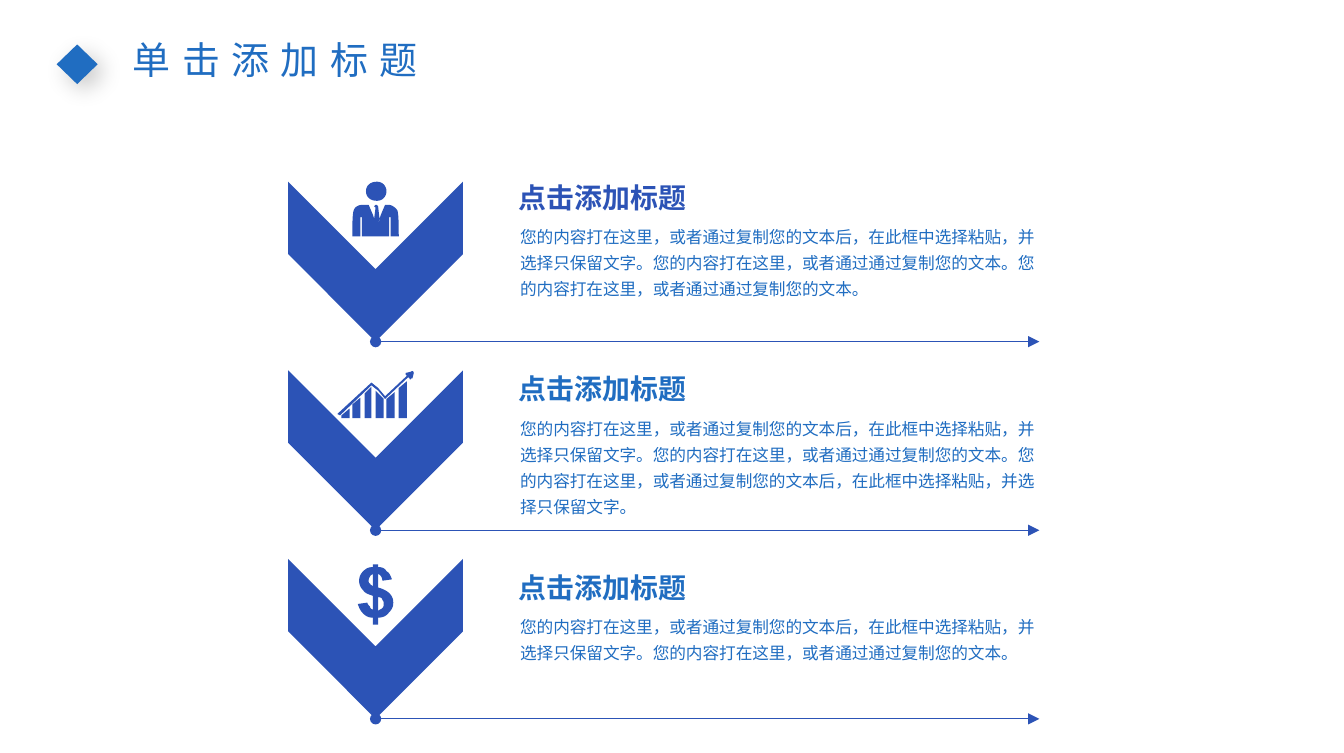
"""Build a slide with three chevron steps, each with an icon, a heading and a text."""
import dataclasses

import lxml.etree
import pptx
import pptx.dml.color
import pptx.enum.shapes
import pptx.enum.text
import pptx.oxml.ns
import pptx.util


@dataclasses.dataclass(frozen=True)
class Theme:
    font: str = "Noto Sans CJK SC"
    deep: str = "2C53B6"
    bright: str = "206DC1"
    shade: str = "000000"
    title: float = 20
    head: float = 14.7
    body: float = 8.8
    line: float = 0.5


THEME = Theme()
COLS, ROWS = 984, 551
CELL = pptx.util.Inches(0.01)
TOP, STEP = 133, 138
LEFT, MID, END = 211, 275, 761
TEXT = 371

ARROW = [[(0, 0), (64, 64), (128, 0), (128, 53), (64, 117), (0, 53)]]
PERSON = [
    [(18, 17), (19, 18), (19, 19), (20, 28), (18, 33), (21, 24), (24, 17), (27, 17),
     (28, 17, 31, 18, 33, 21), (34, 24, 34, 33, 34, 40), (28, 40), (28, 26), (27, 26),
     (27, 40), (7, 40), (7, 26), (6, 26), (6, 40), (0, 40), (0, 33, 0, 24, 1, 21),
     (2, 18, 5, 17, 7, 17), (12, 17), (15, 24), (16, 27), (17, 19), (16, 18), (17, 17)],
    [(18, 0), (22, 0, 25, 3, 25, 7), (25, 11, 22, 14, 18, 14),
     (13, 14, 10, 11, 10, 7), (10, 3, 13, 0, 18, 0)],
]
GRAPH = [
    [(9, 28), (9, 35), (3, 35), (3, 33)],
    [(17, 20), (17, 35), (11, 35), (11, 25)],
    [(25, 12), (25, 35), (20, 35), (20, 17)],
    [(28, 15), (30, 17), (34, 21), (34, 35), (28, 35)],
    [(42, 16), (42, 35), (36, 35), (36, 21)],
    [(51, 8), (51, 35), (45, 35), (45, 13)],
    [(54, 1), (55, 0, 56, 1, 56, 2), (55, 6), (54, 6), (54, 7, 53, 7, 53, 6), (52, 5),
     (35, 21), (30, 15), (25, 11), (2, 33), (0, 32), (25, 9), (30, 13), (35, 19),
     (51, 4), (50, 3), (50, 2)],
]
DOLLAR = [
    [(11, 33), (11, 23), (8, 22, 5, 21, 4, 19), (2, 17, 1, 15, 1, 12),
     (1, 9, 2, 7, 4, 5), (6, 3, 8, 2, 11, 2), (11, 0), (15, 0), (15, 2),
     (18, 2, 20, 3, 21, 5), (23, 6, 24, 8, 25, 11), (18, 12), (18, 10, 17, 8, 15, 7),
     (15, 17), (19, 18, 22, 20, 23, 21), (25, 23, 26, 25, 26, 28),
     (26, 31, 25, 33, 23, 35), (21, 38, 18, 39, 15, 39), (15, 44), (11, 44), (11, 39),
     (8, 39, 6, 38, 4, 36), (2, 34, 1, 32, 0, 29), (7, 28), (7, 29, 8, 30, 9, 31),
     (9, 32, 10, 33, 11, 33)],
    [(11, 7), (10, 8, 9, 8, 9, 9), (8, 10, 8, 11, 8, 12), (8, 13, 8, 14, 9, 14),
     (9, 15, 10, 15, 11, 16)],
    [(15, 34), (16, 33, 17, 33, 18, 32), (19, 31, 19, 30, 19, 29),
     (19, 28, 19, 27, 18, 26), (18, 25, 17, 24, 15, 24)],
]

ITEMS = [
    (PERSON, 258, 0, 120, THEME.deep, 68,
     "您的内容打在这里，或者通过复制您的文本后，在此框中选择粘贴，并选择只保留文字。"
     "您的内容打在这里，或者通过通过复制您的文本。您的内容打在这里，或者通过通过复制您的文本。"),
    (GRAPH, 247, 0, 260, THEME.bright, 87,
     "您的内容打在这里，或者通过复制您的文本后，在此框中选择粘贴，并选择只保留文字。"
     "您的内容打在这里，或者通过通过复制您的文本。"
     "您的内容打在这里，或者通过复制您的文本后，在此框中选择粘贴，并选择只保留文字。"),
    (DOLLAR, 262, 4, 405, THEME.bright, 47,
     "您的内容打在这里，或者通过复制您的文本后，在此框中选择粘贴，并选择只保留文字。"
     "您的内容打在这里，或者通过通过复制您的文本。"),
]


def grid(*cells):
    return [pptx.util.Emu(round(cell * CELL)) for cell in cells]


def tint(color):
    return pptx.dml.color.RGBColor.from_string(color)


def add_tag(node, tag, **attrs):
    return lxml.etree.SubElement(node, pptx.oxml.ns.qn(tag), attrs)


def trace(loop):
    points = [loop[0]]
    for part in loop[1:]:
        if len(part) == 2:
            points.append(part)
            continue
        curve = [points[-1], part[:2], part[2:4], part[4:]]
        for step in range(1, 9):
            t = step / 8
            parts = ((1 - t) ** 3, 3 * t * (1 - t) ** 2, 3 * t * t * (1 - t), t ** 3)
            points.append(tuple(sum(k * p[axis] for k, p in zip(parts, curve))
                                for axis in (0, 1)))
    return [grid(*point) for point in points]


def paint(shape, color):
    shape.shadow.inherit = False
    shape.fill.solid()
    shape.fill.fore_color.rgb = tint(color)
    shape.line.fill.background()


def add_form(slide, loops, left, top):
    first, *rest = [trace(loop) for loop in loops]
    form = slide.shapes.build_freeform(*first[0], scale=1.0)
    form.add_line_segments(first[1:])
    for points in rest:
        form.move_to(*points[0])
        form.add_line_segments(points[1:])
    paint(form.convert_to_shape(*grid(left, top)), THEME.deep)


def add_line(slide, level):
    line = slide.shapes.add_connector(
        pptx.enum.shapes.MSO_CONNECTOR.STRAIGHT, *grid(MID, level, END, level))
    line.line.color.rgb = tint(THEME.deep)
    line.line.width = pptx.util.Pt(THEME.line)
    stroke = line.line._get_or_add_ln()
    add_tag(stroke, "a:headEnd", type="oval")
    add_tag(stroke, "a:tailEnd", type="triangle")
    add_tag(line._element.spPr, "a:effectLst")


def set_text(shape, text, size, color, bold=False, space=1.0):
    frame = shape.text_frame
    frame.text = text
    frame.word_wrap = True
    frame.auto_size = pptx.enum.text.MSO_AUTO_SIZE.SHAPE_TO_FIT_TEXT
    frame.vertical_anchor = pptx.enum.text.MSO_ANCHOR.TOP
    frame.paragraphs[0].line_spacing = space
    font = frame.paragraphs[0].runs[0].font
    font.name, font.size, font.bold = THEME.font, pptx.util.Pt(size), bold
    font.color.rgb = tint(color)
    add_tag(font._element, "a:ea", typeface=THEME.font)
    return frame


def add_title(slide, text):
    title = slide.shapes.title
    title.left, title.top, title.width, title.height = grid(15, 22, 373, 44)
    frame = set_text(title, text, THEME.title, THEME.bright)
    frame.paragraphs[0].alignment = pptx.enum.text.PP_ALIGN.CENTER
    frame.paragraphs[0].runs[0].font._element.set("spc", "600")


def add_mark(slide):
    mark = slide.shapes.add_shape(
        pptx.enum.shapes.MSO_SHAPE.DIAMOND, *grid(42, 32, 29, 30))
    mark.rotation = 90
    paint(mark, THEME.bright)
    glow = add_tag(mark._element.spPr.find(pptx.oxml.ns.qn("a:effectLst")),
                   "a:outerShdw", blurRad=str(pptx.util.Pt(12)),
                   dist=str(pptx.util.Pt(5)), dir="2700000", rotWithShape="0")
    add_tag(add_tag(glow, "a:srgbClr", val=THEME.shade), "a:alpha", val="21000")


def add_item(slide, top, item):
    icon, left, drop, head, color, height, text = item
    add_form(slide, ARROW, LEFT, top)
    add_form(slide, icon, left, top + drop)
    body = slide.shapes.add_textbox(*grid(TEXT, head + 37, 402, height))
    set_text(body, text, THEME.body, THEME.bright, space=1.3)
    label = slide.shapes.add_textbox(*grid(TEXT - 1, head, 269, 33))
    frame = set_text(label, "点击添加标题", THEME.head, color, True, 1.5)
    frame.margin_top = frame.margin_bottom = 0
    add_line(slide, top + 117)


def main():
    deck = pptx.Presentation()
    deck.slide_width, deck.slide_height = grid(COLS, ROWS)
    slide = deck.slides.add_slide(deck.slide_layouts.get_by_name("Title Only"))
    for row, item in enumerate(ITEMS):
        add_item(slide, TOP + row * STEP, item)
    add_mark(slide)
    add_title(slide, "单击添加标题")
    deck.save("out.pptx")


if __name__ == "__main__":
    main()
